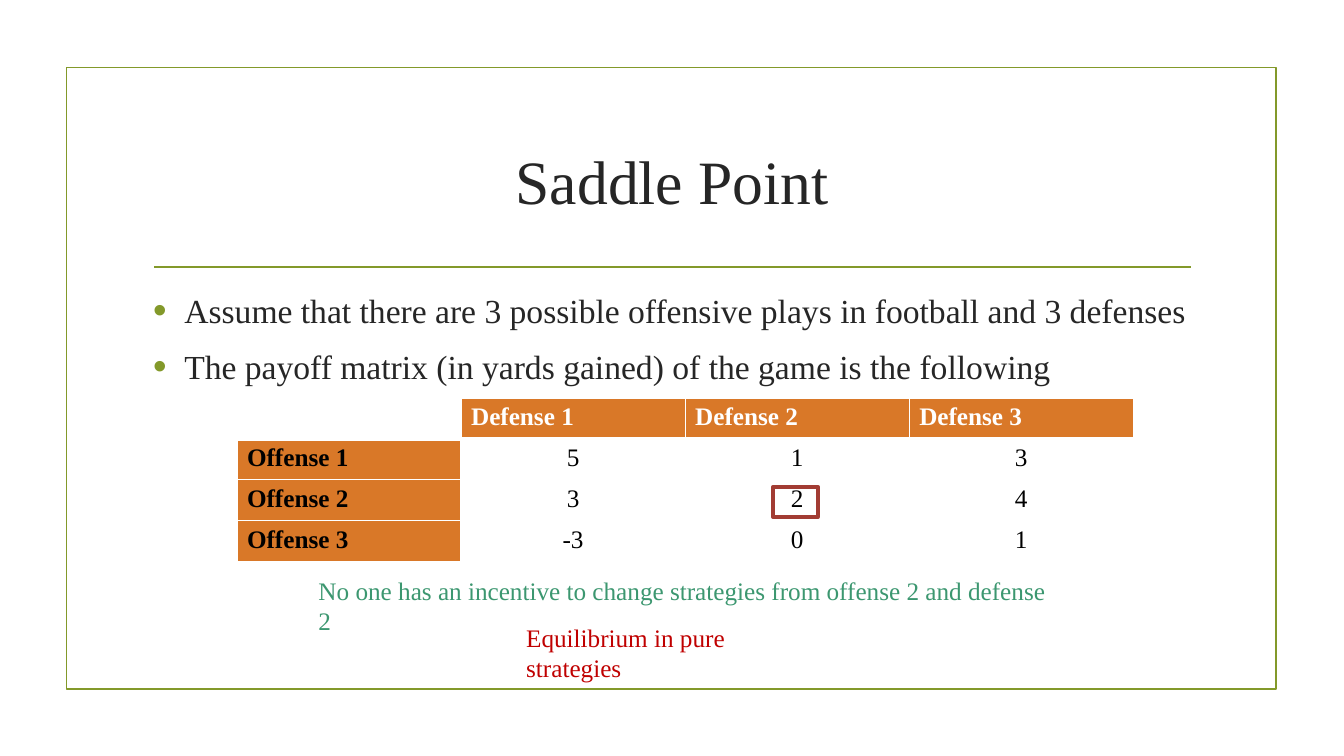
from dataclasses import dataclass

from lxml.etree import SubElement
from pptx import Presentation
from pptx.dml.color import RGBColor
from pptx.enum.shapes import MSO_CONNECTOR, MSO_SHAPE
from pptx.enum.text import MSO_ANCHOR, PP_ALIGN
from pptx.oxml.ns import qn
from pptx.util import Emu, Inches, Pt

COLOURS = {
    "paper": "FFFFFF", "olive": "83992A", "ink": "262626", "orange": "D97828",
    "black": "000000", "brick": "A23C33", "green": "3C9770", "red": "C00000",
}
FONT = "Times New Roman"
WIDTH, HEIGHT = Inches(13.33), Inches(7.5)


@dataclass(frozen=True)
class Area:
    """Place and size in percent of the slide's width and height."""
    left: float
    top: float
    width: float
    height: float

    def emu(self) -> tuple[Emu, Emu, Emu, Emu]:
        return (across(self.left), down(self.top),
                across(self.width), down(self.height))


@dataclass(frozen=True)
class TextStyle:
    size: float
    colour: str
    bold: bool = False


@dataclass(frozen=True)
class Caption:
    area: Area
    wording: str
    style: TextStyle
    align: PP_ALIGN = PP_ALIGN.LEFT
    anchor: MSO_ANCHOR = MSO_ANCHOR.TOP


@dataclass(frozen=True)
class Outline:
    area: Area
    colour: str
    weight: float


def across(share: float) -> Emu:
    return Emu(round(WIDTH * share / 100))


def down(share: float) -> Emu:
    return Emu(round(HEIGHT * share / 100))


def rgb(name: str) -> RGBColor:
    return RGBColor.from_string(COLOURS[name])


def add_run(paragraph, wording: str, style: TextStyle) -> None:
    run = paragraph.add_run()
    run.text = wording
    run.font.name = FONT
    run.font.size = Pt(style.size)
    run.font.bold = style.bold
    run.font.color.rgb = rgb(style.colour)


def add_frame(slide, area: Area, anchor: MSO_ANCHOR = MSO_ANCHOR.TOP):
    frame = slide.shapes.add_textbox(*area.emu()).text_frame
    frame.word_wrap = True
    frame.vertical_anchor = anchor
    return frame


def draw_caption(slide, caption: Caption) -> None:
    paragraph = add_frame(slide, caption.area, caption.anchor).paragraphs[0]
    paragraph.alignment = caption.align
    add_run(paragraph, caption.wording, caption.style)


def draw_outline(slide, outline: Outline) -> None:
    box = slide.shapes.add_shape(MSO_SHAPE.RECTANGLE, *outline.area.emu())
    box.shadow.inherit = False
    box.fill.background()
    box.line.color.rgb = rgb(outline.colour)
    box.line.width = Pt(outline.weight)


def draw_rule(slide, left: float, right: float, top: float) -> None:
    rule = slide.shapes.add_connector(
        MSO_CONNECTOR.STRAIGHT, across(left), down(top), across(right), down(top))
    rule.line.color.rgb = rgb("olive")
    rule.line.width = Pt(1.25)
    SubElement(rule._element.spPr, qn("a:effectLst"))


def draw_bullets(slide, area: Area, points: list[str], style: TextStyle) -> None:
    frame = add_frame(slide, area)
    for index, point in enumerate(points):
        paragraph = frame.add_paragraph() if index else frame.paragraphs[0]
        properties = paragraph._p.get_or_add_pPr()
        properties.set("marL", str(Inches(0.31)))
        properties.set("indent", str(-Inches(0.31)))
        paragraph.alignment = PP_ALIGN.JUSTIFY
        paragraph.space_before = Pt(5 if index else 0)
        paragraph.space_after = Pt(6)
        bullet_colour = SubElement(properties, qn("a:buClr"))
        SubElement(bullet_colour, qn("a:srgbClr"), val=COLOURS["olive"])
        SubElement(properties, qn("a:buSzPct"), val="115000")
        SubElement(properties, qn("a:buFont"), typeface="Arial")
        SubElement(properties, qn("a:buChar"), char="•")
        add_run(paragraph, point, style)


def border_cell(cell, bottom: float) -> None:
    properties = cell._tc.get_or_add_tcPr()
    for side, weight in (("L", 1), ("R", 1), ("T", 1), ("B", bottom)):
        line = SubElement(properties, qn(f"a:ln{side}"), w=str(Pt(weight)))
        fill = SubElement(line, qn("a:solidFill"))
        SubElement(fill, qn("a:srgbClr"), val=COLOURS["paper"])


def draw_payoffs(slide, area: Area, rows: list[list[str]]) -> None:
    table = slide.shapes.add_table(len(rows), len(rows[0]), *area.emu()).table
    table.first_row = table.horz_banding = False
    for r, row in enumerate(rows):
        for c, wording in enumerate(row):
            cell = table.cell(r, c)
            is_label = (r == 0) != (c == 0)
            border_cell(cell, bottom=1 if r else 3)
            if is_label:
                cell.fill.solid()
                cell.fill.fore_color.rgb = rgb("orange")
            else:
                cell.fill.background()
            if wording:
                paragraph = cell.text_frame.paragraphs[0]
                paragraph.alignment = PP_ALIGN.LEFT if is_label else PP_ALIGN.CENTER
                colour = "black" if r else "paper"
                add_run(paragraph, wording, TextStyle(18, colour, is_label))


# Content
PAGE_BORDER = Outline(Area(4.95, 8.93, 90.02, 82.27), "olive", 1.25)
SADDLE_MARK = Outline(Area(57.54, 64.4, 3.3, 4), "brick", 3)
TITLE = Caption(Area(10.65, 14.27, 78.77, 19.07), "Saddle Point",
                TextStyle(44, "ink"), PP_ALIGN.CENTER, MSO_ANCHOR.MIDDLE)
POINTS = [
    "Assume that there are 3 possible offensive plays in football and 3 defenses",
    "The payoff matrix (in yards gained) of the game is the following",
]
PAYOFFS = [
    ["", "Defense 1", "Defense 2", "Defense 3"],
    ["Offense 1", "5", "1", "3"],
    ["Offense 2", "3", "2", "4"],
    ["Offense 3", "-3", "0", "1"],
]
CONCLUSIONS = [
    Caption(Area(22.96, 75.47, 56.04, 5.33),
            "No one has an incentive to change strategies from offense 2 and defense 2",
            TextStyle(18, "green")),
    Caption(Area(38.41, 81.6, 23.26, 5.33), "Equilibrium in pure strategies",
            TextStyle(18, "red")),
]


def main() -> None:
    deck = Presentation()
    deck.slide_width, deck.slide_height = WIDTH, HEIGHT
    slide = deck.slides.add_slide(deck.slide_layouts[6])

    # Page border, title and rule
    draw_outline(slide, PAGE_BORDER)
    draw_rule(slide, left=11.48, right=88.6, top=35.33)
    draw_caption(slide, TITLE)

    # Game and its payoff matrix
    draw_bullets(slide, Area(10.65, 37.73, 78.77, 48), POINTS, TextStyle(24, "ink"))
    draw_payoffs(slide, Area(17.63, 52.67, 66.69, 21.6), PAYOFFS)

    # Saddle point and conclusions
    draw_outline(slide, SADDLE_MARK)
    for conclusion in CONCLUSIONS:
        draw_caption(slide, conclusion)

    deck.save("out.pptx")


if __name__ == "__main__":
    main()
